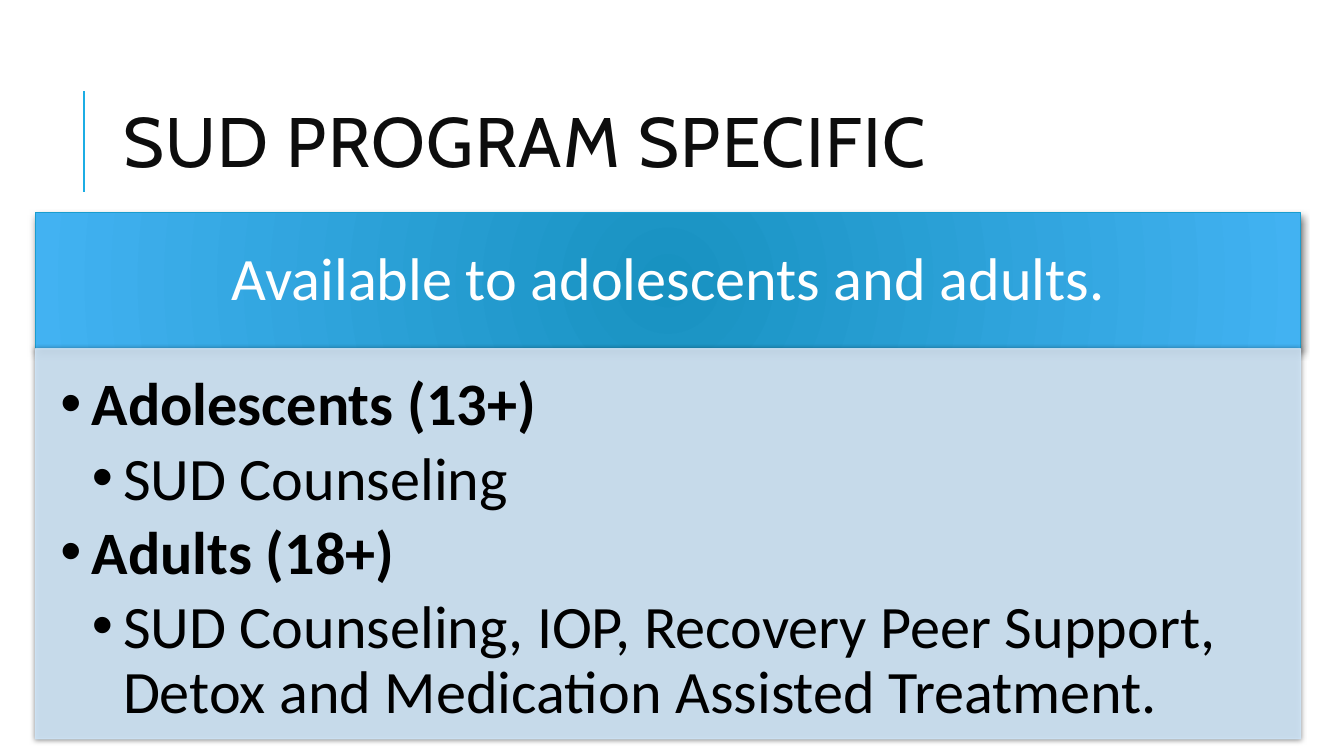
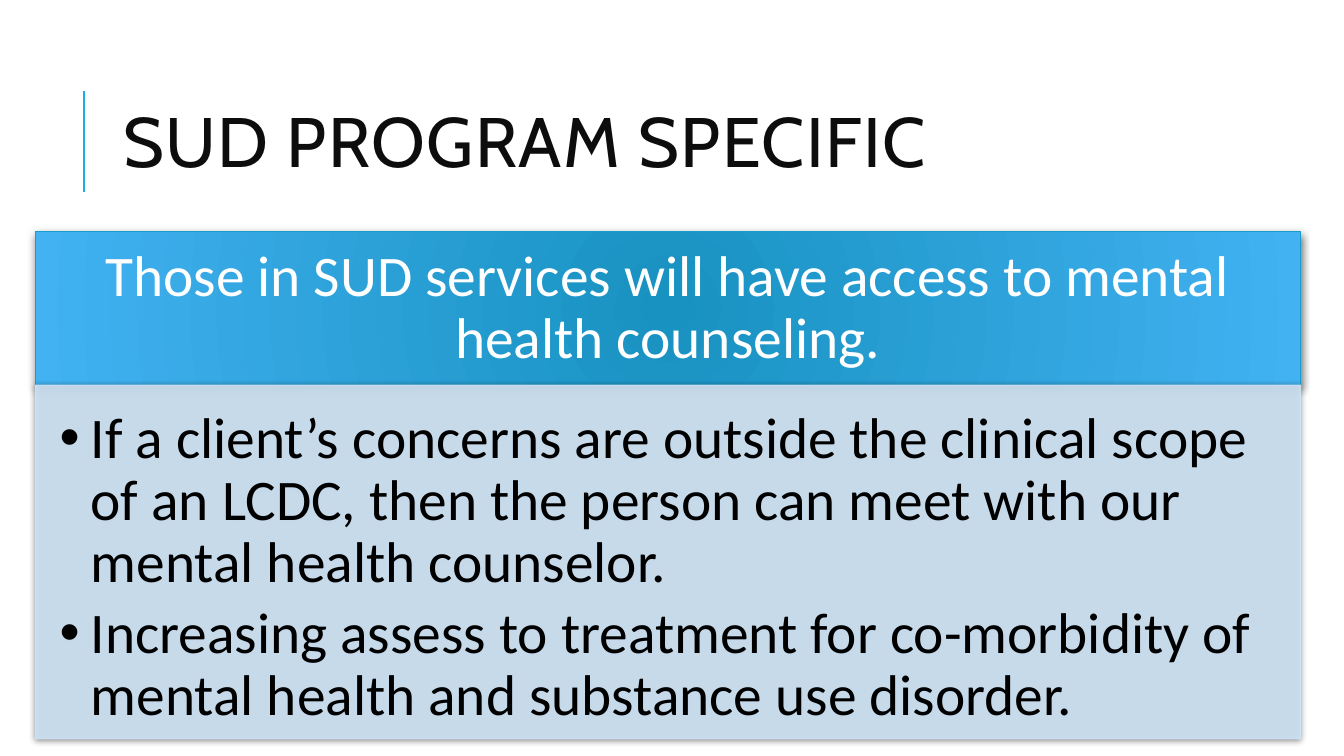
from pptx import Presentation
from pptx import util as u
from pptx.dml.color import RGBColor
from pptx.enum import shapes, text
from pptx.oxml import parse_xml
from pptx.oxml.ns import nsdecls, qn

PX = 9144  # 100 px to the inch
LEFT, WIDE, BASE = 35, 1255, 733
SKY, INK, BLACK, WHITE = "1CADE4", "0D0D0D", "000000", "FFFFFF"
EDGE, PALE, CORE, RIM = "199DCF", "CDE3F5", "1892C1", "42B2F2"
TITLE = "SUD PROGRAM SPECIFIC"

# Heading, top and height of the band, text size, insets, list items (level, bold, words)
PAGES = [
    dict(head="Available to adolescents and adults.", top=211, high=135, size=43,
         band=(33, 19, 33, 19), pad=(25, 25, 33, 38),
         items=[(0, True, "Adolescents (13+)"),
                (1, False, "SUD Counseling"),
                (0, True, "Adults (18+)"),
                (1, False, "SUD Counseling, IOP, Recovery Peer Support, "
                           "Detox and Medication Assisted Treatment.")]),
    dict(head="Those in SUD services will have access to mental health counseling.",
         top=230, high=152, size=41, band=(32, 18, 32, 18), pad=(24, 24, 32, 36),
         items=[(0, False, "If a client’s concerns are outside the clinical scope of an "
                           "LCDC, then the person can meet with our mental health counselor."),
                (0, False, "Increasing assess to treatment for co-morbidity of "
                           "mental health and substance use disorder.")]),
]


def px(n):
    return u.Emu(n * PX)


def rgb(code):
    return RGBColor.from_string(code)


def put(obj, **vals):
    for key, val in vals.items():
        setattr(obj, key, val)


def place(shape, *box):
    put(shape, **dict(zip(("left", "top", "width", "height"), map(px, box))))


def frame(shape, anchor, pad):
    sides = ("margin_left", "margin_top", "margin_right", "margin_bottom")
    put(shape.text_frame, word_wrap=True, auto_size=text.MSO_AUTO_SIZE.NONE,
        vertical_anchor=anchor, **dict(zip(sides, map(px, pad))))


def write(para, words, font, size, color, bold=False, **vals):
    run = para.add_run()
    run.text = words
    put(run.font, name=font, size=u.Pt(size), bold=bold)
    run.font.color.rgb = rgb(color)
    put(para, space_before=u.Pt(0), **vals)
    return run


def edge(shape, color, width):
    shape.line.color.rgb = rgb(color)
    shape.line.width = u.Pt(width)


def shade(shape, alpha, blur, dist):
    shape.shadow.inherit = False
    shape._element.spPr.find(qn("a:effectLst")).append(parse_xml(
        f'<a:outerShdw {nsdecls("a")} blurRad="{u.Pt(blur)}" dist="{u.Pt(dist)}" '
        f'dir="5400000" rotWithShape="0"><a:srgbClr val="{BLACK}">'
        f'<a:alpha val="{alpha * 1000}"/></a:srgbClr></a:outerShdw>'))


def glow(shape):
    """Fill with a gradient that spreads from the centre."""
    shape.fill.background()
    stops = "".join(f'<a:gs pos="{pos}"><a:srgbClr val="{color}"/></a:gs>'
                    for pos, color in ((0, CORE), (100000, RIM)))
    props = shape._element.spPr
    props.replace(props.find(qn("a:noFill")), parse_xml(
        f'<a:gradFill {nsdecls("a")} rotWithShape="1"><a:gsLst>{stops}</a:gsLst>'
        '<a:path path="circle"><a:fillToRect l="50000" t="50000" r="50000" b="50000"/>'
        '</a:path></a:gradFill>'))


def fade(shape, alpha):
    for tint in shape._element.spPr.findall(".//" + qn("a:srgbClr")):
        tint.append(parse_xml(f'<a:alpha {nsdecls("a")} val="{alpha * 1000}"/>'))


def dot(para, level):
    para.level = level
    props = para._p.get_or_add_pPr()
    props.set("marL", str(px(31 * (level + 1))))
    props.set("indent", str(px(-31)))
    for tag in ('buFont {} typeface="Arial"', 'buChar {} char="•"'):
        props.append(parse_xml("<a:" + tag.format(nsdecls("a")) + "/>"))


def header(slide):
    rule = slide.shapes.add_connector(
        shapes.MSO_CONNECTOR.STRAIGHT, px(83), px(190), px(83), px(90))
    edge(rule, SKY, 1.5)
    rule._element.spPr.append(parse_xml(f'<a:effectLst {nsdecls("a")}/>'))
    title = slide.shapes.title
    place(title, 112, 64, 1063, 164)
    frame(title, text.MSO_ANCHOR.MIDDLE, (10, 5, 10, 5))
    run = write(title.text_frame.paragraphs[0], TITLE, "Cabin", 50, INK,
                alignment=text.PP_ALIGN.LEFT, line_spacing=0.8)
    run.font._element.set("spc", "100")


def banner(slide, page):
    band = slide.shapes.add_shape(
        shapes.MSO_SHAPE.RECTANGLE, px(LEFT), px(page["top"]), px(WIDE), px(page["high"]))
    glow(band)
    edge(band, EDGE, 0.75)
    shade(band, 60, 6, 2)
    frame(band, text.MSO_ANCHOR.MIDDLE, page["band"])
    write(band.text_frame.paragraphs[0], page["head"], "Calibri", page["size"], WHITE,
          alignment=text.PP_ALIGN.CENTER, line_spacing=0.9)
    return band


def panel(slide, page):
    body = slide.placeholders[1]
    top = page["top"] + page["high"]
    place(body, LEFT, top, WIDE, BASE - top)
    body.fill.solid()
    body.fill.fore_color.rgb = rgb(PALE)
    edge(body, PALE, 0.75)
    fade(body, 90)
    shade(body, 50, 4, 1)
    frame(body, text.MSO_ANCHOR.TOP, page["pad"])
    lines = body.text_frame
    for i, (level, bold, words) in enumerate(page["items"]):
        para = lines.add_paragraph() if i else lines.paragraphs[0]
        write(para, words, "Calibri", page["size"], BLACK, bold,
              alignment=text.PP_ALIGN.LEFT, line_spacing=0.9, space_after=u.Pt(6.5))
        dot(para, level)
    return body


def main():
    deck = Presentation()
    put(deck, slide_width=px(1333), slide_height=px(750))
    for page in PAGES:
        slide = deck.slides.add_slide(deck.slide_layouts[1])
        header(slide)
        band = banner(slide, page)
        # The panel lies over the band's shadow
        band._element.addnext(panel(slide, page)._element)
    deck.save("out.pptx")


if __name__ == "__main__":
    main()
